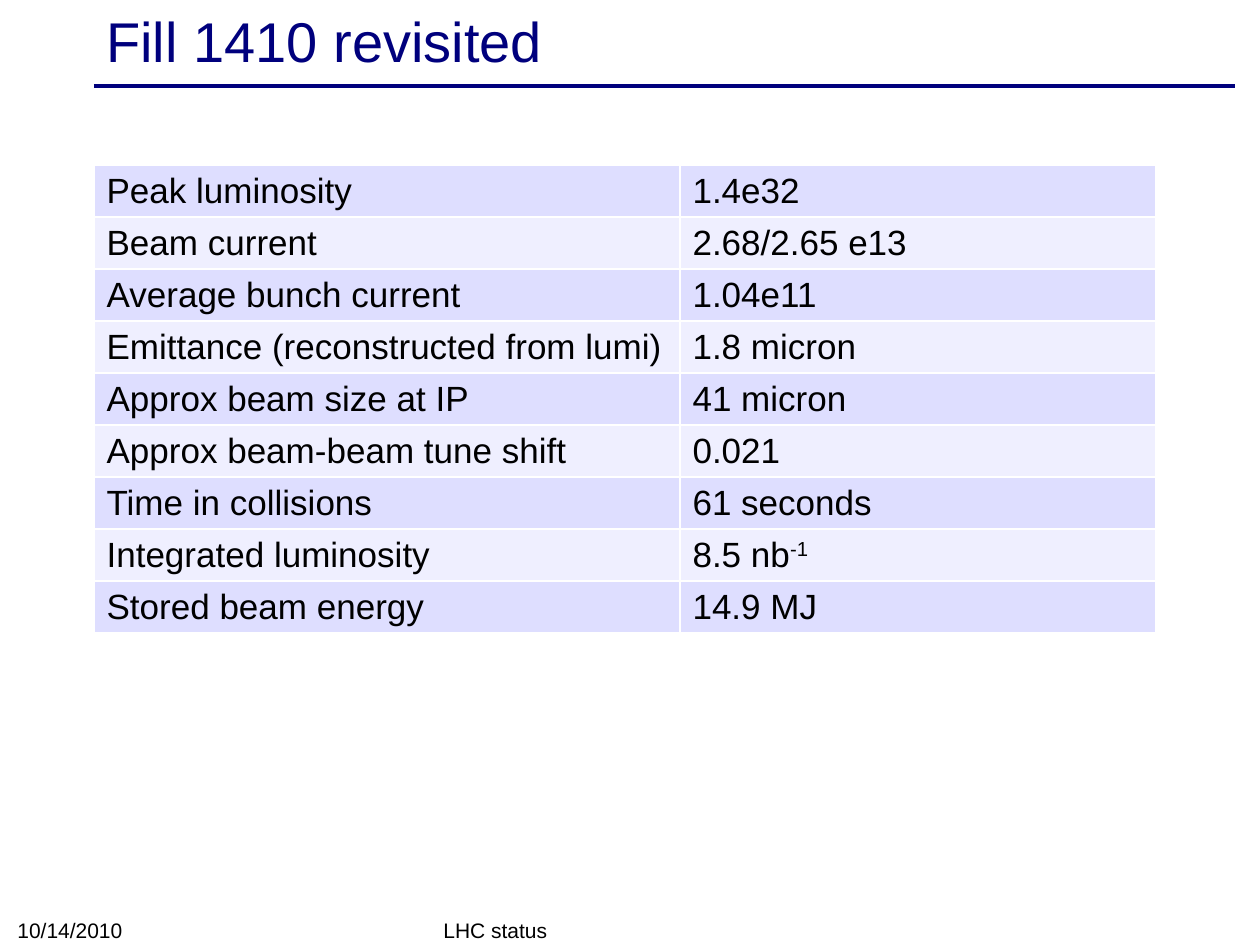
import pptx
import pptx.util
import pptx.dml.color
import pptx.enum.shapes
import pptx.enum.text
import pptx.oxml.ns
import lxml.etree

PX = 914400 // 126
NAVY = pptx.dml.color.RGBColor(0x00, 0x00, 0x7D)
BLACK = pptx.dml.color.RGBColor(0x00, 0x00, 0x00)
LAVENDER = pptx.dml.color.RGBColor(0xDE, 0xDE, 0xFF)
PALE = pptx.dml.color.RGBColor(0xEF, 0xEF, 0xFF)
MIDDLE = pptx.enum.text.MSO_ANCHOR.MIDDLE
BOTTOM = pptx.enum.text.MSO_ANCHOR.BOTTOM


def write(para, text, size, color):
    span = para.add_run()
    span.text = text
    span.font.color.rgb = color
    style = {"name": "Arial", "size": pptx.util.Pt(size), "bold": False}
    for key, value in style.items():
        setattr(span.font, key, value)
    return span


def add_child(parent, tag, **attributes):
    return lxml.etree.SubElement(parent, pptx.oxml.ns.qn(tag), attributes)


deck = pptx.Presentation()
deck.slide_width = 1260 * PX
deck.slide_height = 945 * PX
page = deck.slides.add_slide(deck.slide_layouts[6])

rule = page.shapes.add_connector(
    pptx.enum.shapes.MSO_CONNECTOR.STRAIGHT, 94 * PX, 86 * PX, 1235 * PX, 86 * PX)
rule.line.color.rgb = NAVY
rule.line.width = pptx.util.Pt(2)
add_child(rule._element.spPr, "a:effectLst")

texts = [
    ("Fill 1410 revisited", 94, 4, 1134, 72, 32, NAVY, MIDDLE),
    ("LHC status", 431, 913, 399, 36, 12, BLACK, BOTTOM),
    ("10/14/2010", 5, 912, 294, 37, 12, BLACK, BOTTOM),
]
for text, left, top, width, height, size, color, anchor in texts:
    box = page.shapes.add_textbox(left * PX, top * PX, width * PX, height * PX)
    layout = {"word_wrap": True, "vertical_anchor": anchor}
    for key, value in layout.items():
        setattr(box.text_frame, key, value)
    write(box.text_frame.paragraphs[0], text, size, color)

fill_data = [
    ("Peak luminosity", "1.4e32", ""),
    ("Beam current", "2.68/2.65 e13", ""),
    ("Average bunch current", "1.04e11", ""),
    ("Emittance (reconstructed from lumi)", "1.8 micron", ""),
    ("Approx beam size at IP", "41 micron", ""),
    ("Approx beam-beam tune shift", "0.021", ""),
    ("Time in collisions", "61 seconds", ""),
    ("Integrated luminosity", "8.5 nb", "-1"),
    ("Stored beam energy", "14.9 MJ", ""),
]
table = page.shapes.add_table(
    len(fill_data), 2, 94 * PX, 165 * PX, 1062 * PX, 465 * PX).table
table.first_row = False
table.columns[0].width = 586 * PX
table.columns[1].width = 476 * PX

for row, (label, value, exponent) in enumerate(fill_data):
    for column, text in enumerate((label, value)):
        cell = table.cell(row, column)
        layout = {"margin_top": 5 * PX, "margin_bottom": 5 * PX, "vertical_anchor": MIDDLE}
        for key, setting in layout.items():
            setattr(cell, key, setting)
        para = cell.text_frame.paragraphs[0]
        write(para, text, 20, BLACK)
        if column == 1 and exponent:
            span = write(para, exponent, 20, BLACK)
            span.font._element.set("baseline", "30000")
        properties = cell._tc.get_or_add_tcPr()
        for side in ("a:lnL", "a:lnR", "a:lnT", "a:lnB"):
            border = add_child(properties, side, w="12700")
            add_child(add_child(border, "a:solidFill"), "a:srgbClr", val="FFFFFF")
        cell.fill.solid()
        cell.fill.fore_color.rgb = PALE if row % 2 else LAVENDER

deck.save("out.pptx")
